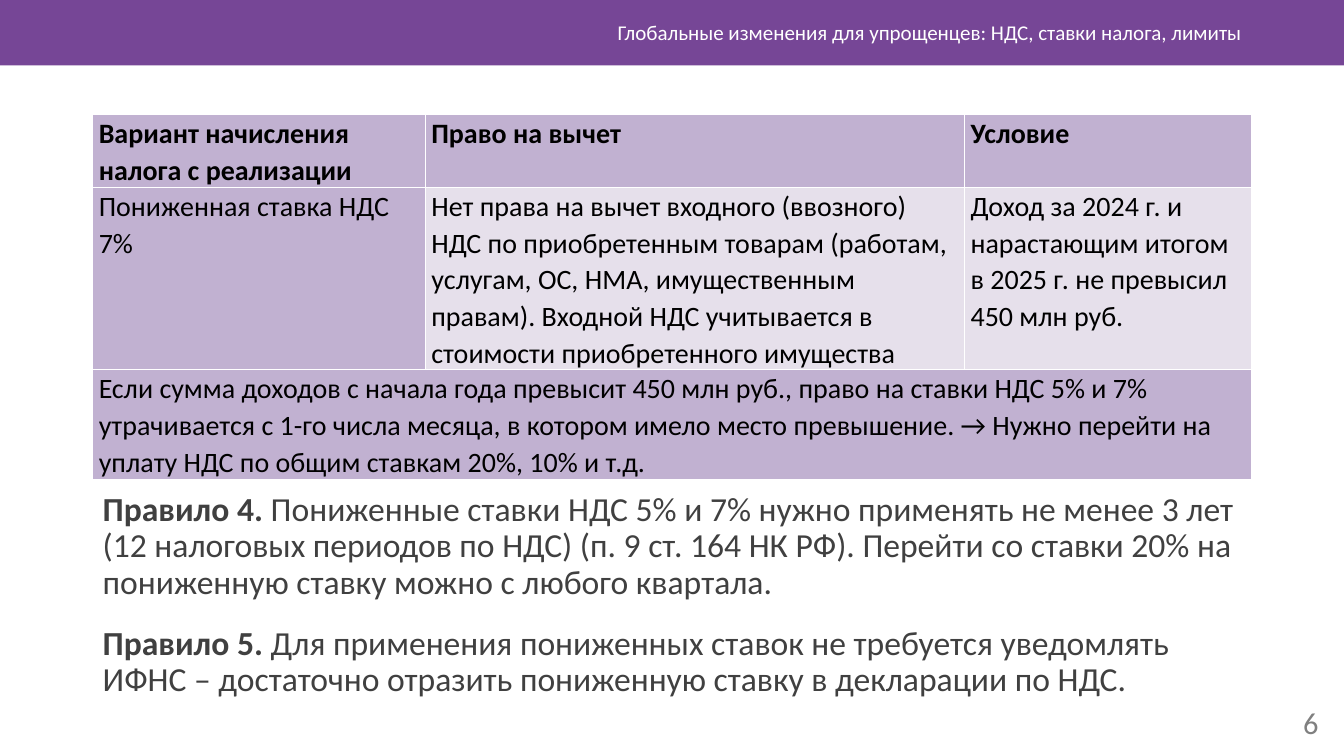
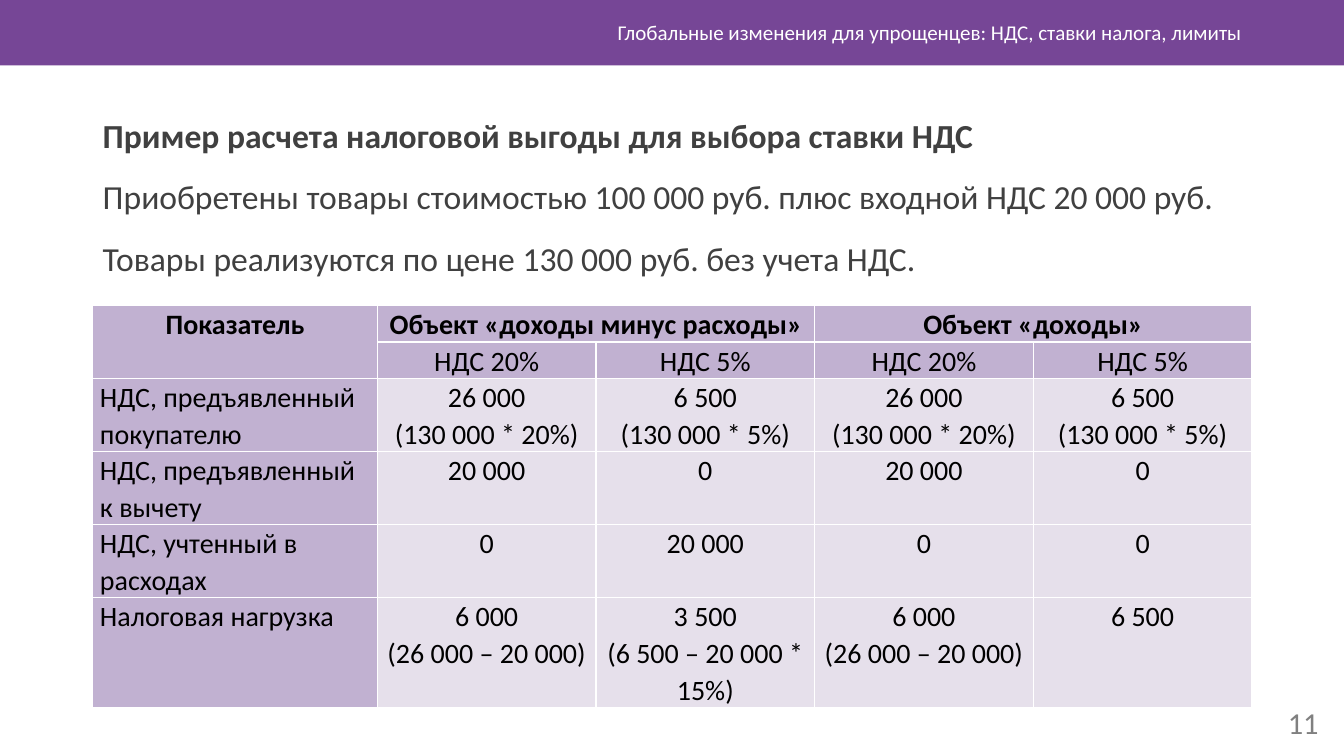
from pptx import Presentation
from pptx.dml.color import RGBColor
from pptx.enum.shapes import MSO_SHAPE as Shape
from pptx.enum.text import MSO_ANCHOR as Anchor, PP_ALIGN as Align
from pptx.util import Cm, Pt

FONT = "Calibri"
PURPLE, LILAC, PALE = "764696", "C1B1D1", "E6E0EB"
BLACK, DARK, GREY, WHITE = "000000", "404040", "808080", "FFFFFF"
WIDE, HIGH = 33.87, 19.05
LEFT, SPAN = 2.34, 29.21
LINE = 0.92  # height of one table text line, cm
TITLE = "Глобальные изменения для упрощенцев: НДС, ставки налога, лимиты"

RULES = [
    ("Правило 4. ",
     "Пониженные ставки НДС 5% и 7% нужно применять не менее 3 лет "
     "(12 налоговых периодов по НДС) (п. 9 ст. 164 НК РФ). Перейти со ставки "
     "20% на пониженную ставку можно с любого квартала."),
    ("Правило 5. ",
     "Для применения пониженных ставок не требуется уведомлять ИФНС – "
     "достаточно отразить пониженную ставку в декларации по НДС."),
]
RATES = [
    ["Вариант начисления налога с реализации", "Право на вычет", "Условие"],
    ["Пониженная ставка НДС 7%",
     "Нет права на вычет входного (ввозного) НДС по приобретенным товарам "
     "(работам, услугам, ОС, НМА, имущественным правам). Входной НДС "
     "учитывается в стоимости приобретенного имущества",
     "Доход за 2024 г. и нарастающим итогом в 2025 г. не превысил "
     "450 млн руб."],
    ["Если сумма доходов с начала года превысит 450 млн руб., право на ставки "
     "НДС 5% и 7% утрачивается с 1-го числа месяца, в котором имело место "
     "превышение. → Нужно перейти на уплату НДС по общим ставкам 20%, 10% "
     "и т.д.", "", ""],
]
CASE = [
    ("Пример расчета налоговой выгоды для выбора ставки НДС", ""),
    ("", "Приобретены товары стоимостью 100 000 руб. плюс входной НДС "
         "20 000 руб."),
    ("", "Товары реализуются по цене 130 000 руб. без учета НДС."),
]
FULL, LOW = "26 000\n(130 000 * 20%)", "6 500\n(130 000 * 5%)"
LOAD = "6 000\n(26 000 – 20 000)"
GAIN = [
    ["Показатель", "Объект «доходы минус расходы»", "", "Объект «доходы»", ""],
    [""] + ["НДС 20%", "НДС 5%"] * 2,
    ["НДС, предъявленный покупателю"] + [FULL, LOW] * 2,
    ["НДС, предъявленный к вычету"] + ["20 000", "0"] * 2,
    ["НДС, учтенный в расходах", "0", "20 000", "0", "0"],
    ["Налоговая нагрузка", LOAD, "3 500\n(6 500 – 20 000 * 15%)", LOAD,
     "6 500"],
]


def color(code):
    return RGBColor.from_string(code)


def style(run, size, code, bold=False):
    font = run.font
    font.name, font.size, font.bold = FONT, Pt(size), bold
    font.color.rgb = color(code)


def place(shape, left, top, width, height):
    shape.left, shape.top = Cm(left), Cm(top)
    shape.width, shape.height = Cm(width), Cm(height)


def label(shape, text, size, code):
    """Fill a shape with one right-aligned, middle-anchored line."""
    frame = shape.text_frame
    frame.text = text
    frame.word_wrap = True
    frame.vertical_anchor = Anchor.MIDDLE
    para = frame.paragraphs[0]
    para.alignment = Align.RIGHT
    style(para.runs[0], size, code)


def start(deck, number):
    """Add a slide with its band, title and page number."""
    slide = deck.slides.add_slide(deck.slide_layouts[5])
    title = slide.shapes.title
    place(title, 9, 0.3, 22.55, 1.02)
    label(title, TITLE, 15, WHITE)
    band = slide.shapes.add_shape(Shape.RECTANGLE, 0, 0, Cm(WIDE), Cm(1.65))
    band.shadow.inherit = False
    band.fill.solid()
    band.fill.fore_color.rgb = color(PURPLE)
    band.line.fill.background()
    title.element.addprevious(band.element)
    page = slide.shapes.add_textbox(Cm(31.78), Cm(17.7), Cm(1.7), Cm(1.02))
    label(page, str(number), 21.7, GREY)
    return slide


def prose(slide, top, height, items):
    """Add paragraphs, each a pair of bold lead and plain rest."""
    box = slide.shapes.add_textbox(Cm(LEFT), Cm(top), Cm(SPAN), Cm(height))
    frame = box.text_frame
    frame.word_wrap = True
    for i, pair in enumerate(items):
        para = frame.add_paragraph() if i else frame.paragraphs[0]
        para.line_spacing = 0.9
        para.space_before, para.space_after = Pt(10 if i else 0), Pt(8)
        for text, bold in zip(pair, (True, False)):
            if text:
                run = para.add_run()
                run.text = text
                style(run, 24, DARK, bold)


def fill_cell(cell, text, back, align, bold, inset):
    cell.margin_left = cell.margin_right = Cm(inset)
    cell.margin_top = cell.margin_bottom = 0
    cell.fill.solid()
    cell.fill.fore_color.rgb = color(back)
    cell.text_frame.text = text
    for para in cell.text_frame.paragraphs:
        para.alignment = align
        para.line_spacing = 1.07
        for run in para.runs:
            style(run, 20, BLACK, bold)


def grid(slide, top, data, widths, lines, merges, heads=1,
         align=Align.LEFT, inset=0.15):
    """Add a table; lines gives the text lines of each row."""
    frame = slide.shapes.add_table(
        len(data), len(widths), Cm(LEFT), Cm(top), Cm(SPAN),
        Cm(LINE * sum(lines)))
    table = frame.table
    table.horz_banding = False
    for col, width in zip(table.columns, widths):
        col.width = Cm(width)
    for row, count in zip(table.rows, lines):
        row.height = Cm(LINE * count)
    for r, texts in enumerate(data):
        for c, text in enumerate(texts):
            back = LILAC if r < heads or c == 0 else PALE
            side = Align.LEFT if r >= heads and c == 0 else align
            fill_cell(table.cell(r, c), text, back, side, r == 0, inset)
    for first, last in merges:
        table.cell(*first).merge(table.cell(*last))


def main():
    deck = Presentation()
    deck.slide_width, deck.slide_height = Cm(WIDE), Cm(HIGH)

    slide = start(deck, 6)
    grid(slide, 2.88, RATES, [8.38, 13.59, 7.24], [2, 5, 3],
         [((2, 0), (2, 2))])
    prose(slide, 12.29, 5.4, RULES)

    slide = start(deck, 11)
    prose(slide, 2.88, 4.6, CASE)
    grid(slide, 7.7, GAIN, [7.17] + [5.51] * 4, [1, 1, 2, 2, 2, 3],
         [((0, 0), (1, 0)), ((0, 1), (0, 2)), ((0, 3), (0, 4))],
         heads=2, align=Align.CENTER, inset=0.18)

    deck.save("out.pptx")


if __name__ == "__main__":
    main()
